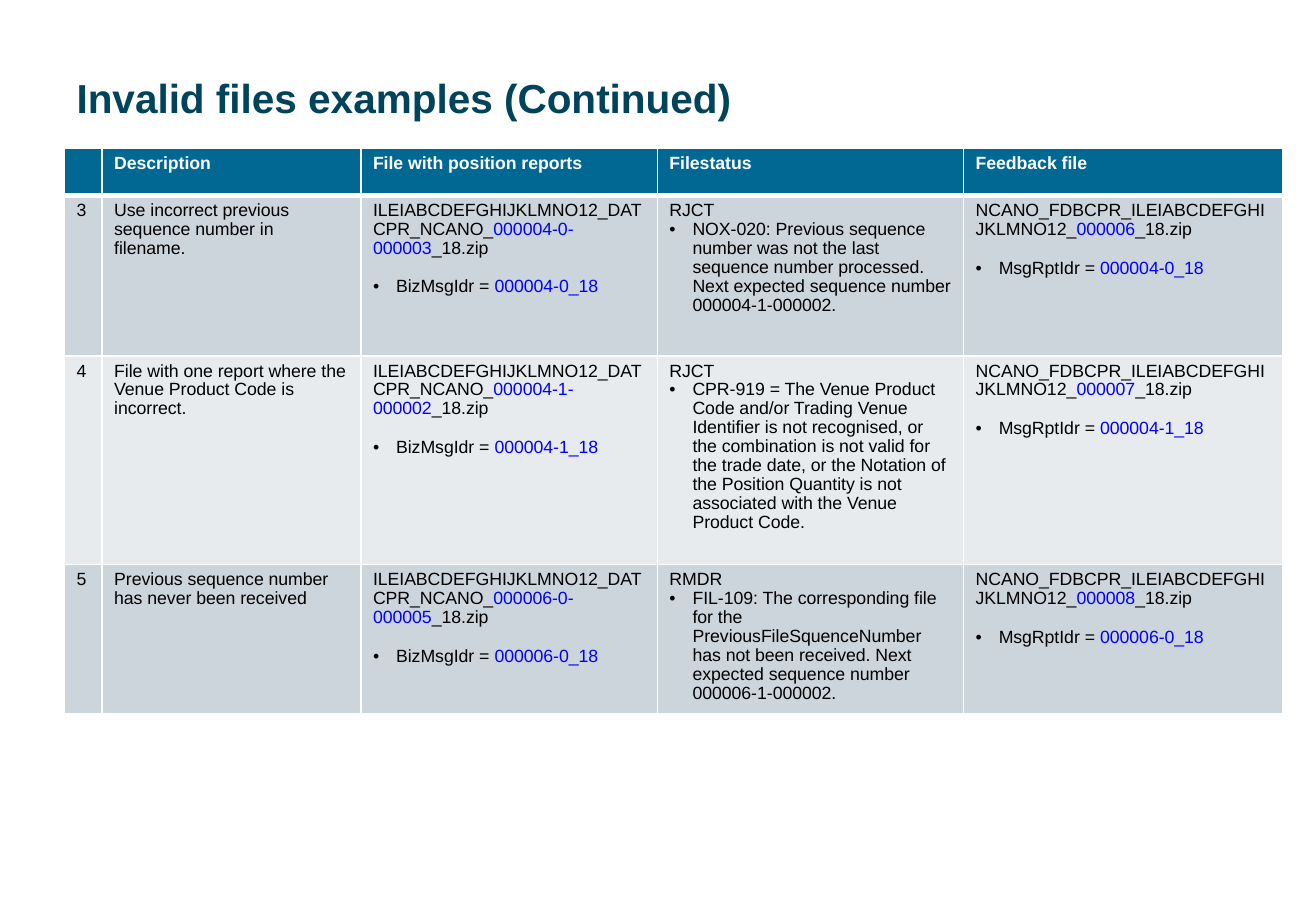
"""Build the slide listing invalid file examples 3 to 5."""
from lxml import etree
from pptx import Presentation, util as u
from pptx.dml.color import RGBColor
from pptx.enum import text
from pptx.oxml.ns import qn

WIDTH, HEIGHT = 10.83, 7.5
TITLE = "Invalid files examples (Continued)"
HEADINGS = ["", "Description", "File with position reports", "Filestatus", "Feedback file"]
EXAMPLES = [
    ("3", "Use incorrect previous sequence number in filename.",
     "000004-0-000003", "000004-0_18", "RJCT",
     "NOX-020: Previous sequence number was not the last sequence number processed. "
     "Next expected sequence number 000004-1-000002.", "000006"),
    ("4", "File with one report where the Venue Product Code is incorrect.",
     "000004-1-000002", "000004-1_18", "RJCT",
     "CPR-919 = The Venue Product Code and/or Trading Venue Identifier is not recognised, "
     "or the combination is not valid for the trade date, or the Notation of the Position "
     "Quantity is not associated with the Venue Product Code.", "000007"),
    ("5", "Previous sequence number has never been received",
     "000006-0-000005", "000006-0_18", "RMDR",
     "FIL-109: The corresponding file for the PreviousFileSquenceNumber has not been "
     "received. Next expected sequence number 000006-1-000002.", "000008"),
]
COLUMNS = [0.31, 2.13, 2.44, 2.52, 2.63]
ROWS = [0.39, 1.32, 1.72, 1.23]
LEFT, TITLE_TOP, TABLE_TOP = 0.53, 0.53, 1.22
TITLE_INK, HEADER, BANDS = "00445C", "006892", ["CCD4DC", "E7EBEE"]
WHITE, BLACK, BLUE = "FFFFFF", "000000", "0000FF"
FONT, SIZE, LINE, INDENT = "Arial", 10.5, 0.96, 0.19


def color(value):
    return RGBColor.from_string(value)


def style(font, size, ink, bold):
    font.name, font.size, font.bold = FONT, u.Pt(size), bold
    font.color.rgb = color(ink)


def add_bullet(para):
    props = para._p.get_or_add_pPr()
    props.set("marL", str(u.Inches(INDENT)))
    props.set("indent", str(-u.Inches(INDENT)))
    etree.SubElement(props, qn("a:buFont")).set("typeface", FONT)
    etree.SubElement(props, qn("a:buChar")).set("char", "•")


def add_borders(cell, is_header):
    props = cell._tc.get_or_add_tcPr()
    for side in "LRTB":
        heavy = is_header and side == "B"
        line = etree.SubElement(props, qn(f"a:ln{side}"), w=str(u.Pt(3 if heavy else 1)))
        fill = etree.SubElement(line, qn("a:solidFill"))
        etree.SubElement(fill, qn("a:srgbClr")).set("val", WHITE)


def fill_cell(cell, paragraphs, fill, ink, bold):
    """Write paragraphs of (plain, blue, plain) spans; all but the first are bulleted."""
    add_borders(cell, bold)
    cell.fill.solid()
    cell.fill.fore_color.rgb = color(fill)
    for index, spans in enumerate(paragraphs):
        para = cell.text_frame.paragraphs[0] if index == 0 else cell.text_frame.add_paragraph()
        para.line_spacing = LINE
        if index:
            para.space_before = u.Pt(11.6 if len(spans) > 1 else 0)
            add_bullet(para)
        style(para.font, SIZE, ink, bold)
        for place, words in enumerate(spans):
            span = para.add_run()
            span.text = words
            style(span.font, SIZE, BLUE if place == 1 else ink, bold)


def example_cells(number, description, sequence, message, status, reason, feedback):
    return [
        [[number]],
        [[description]],
        [["ILEIABCDEFGHIJKLMNO12_DATCPR_NCANO_", sequence, "_18.zip"], ["BizMsgIdr = ", message]],
        [[status], [reason]],
        [["NCANO_FDBCPR_ILEIABCDEFGHIJKLMNO12_", feedback, "_18.zip"], ["MsgRptIdr = ", message]],
    ]


def add_title(page):
    title = page.shapes.title
    title.left, title.top = u.Inches(LEFT), u.Inches(TITLE_TOP)
    title.width, title.height = u.Inches(8.11), u.Inches(0.54)
    title.text_frame.text = TITLE
    title.text_frame.vertical_anchor = text.MSO_ANCHOR.MIDDLE
    para = title.text_frame.paragraphs[0]
    para.alignment = text.PP_ALIGN.LEFT
    style(para.font, 24, TITLE_INK, True)


def add_examples(page):
    table = page.shapes.add_table(
        len(ROWS), len(COLUMNS), u.Inches(LEFT), u.Inches(TABLE_TOP),
        u.Inches(sum(COLUMNS)), u.Inches(sum(ROWS))).table
    for column, width in zip(table.columns, COLUMNS):
        column.width = u.Inches(width)
    content = [[[[heading]] for heading in HEADINGS]]
    content += [example_cells(*example) for example in EXAMPLES]
    for index, (row, height, cells) in enumerate(zip(table.rows, ROWS, content)):
        row.height = u.Inches(height)
        is_header = index == 0
        fill = HEADER if is_header else BANDS[(index - 1) % 2]
        for cell, paragraphs in zip(row.cells, cells):
            fill_cell(cell, paragraphs, fill, WHITE if is_header else BLACK, is_header)


def main():
    deck = Presentation()
    deck.slide_width, deck.slide_height = u.Inches(WIDTH), u.Inches(HEIGHT)
    page = deck.slides.add_slide(deck.slide_layouts[5])
    add_title(page)
    add_examples(page)
    deck.save("out.pptx")


if __name__ == "__main__":
    main()
